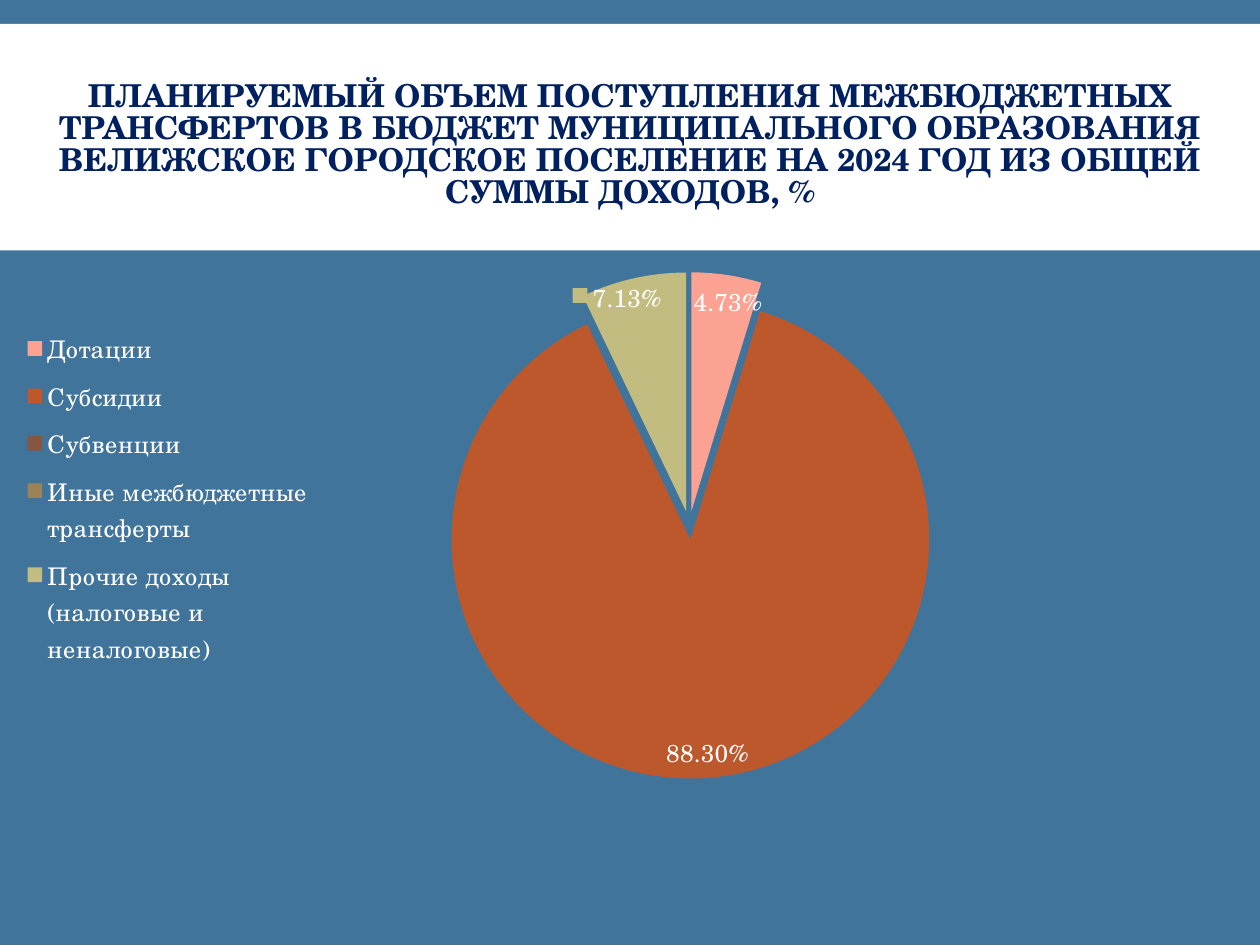
"""Build the slide with the planned share of interbudgetary transfers in 2024."""
import pptx
import pptx.chart.data
import pptx.dml.color
import pptx.enum.chart
import pptx.enum.shapes
import pptx.enum.text
import pptx.oxml
import pptx.oxml.ns
import pptx.util

Cm = pptx.util.Cm
Pt = pptx.util.Pt
FONT = "TeX Gyre Schola"
NUMBER_FORMAT = "0.00%;;"
COLORS = {"background": "40749B", "band": "FFFFFF", "title": "002060", "text": "FFFFFF"}
SLICES = {
    "Дотации": (0.0473, "FBA293"),
    "Субсидии": (0.883, "BD582C"),
    "Субвенции": (0, "865640"),
    "Иные межбюджетные трансферты": (0, "9B8357"),
    "Прочие доходы (налоговые и неналоговые)": (0.0713, "C2BC80"),
}
LABEL_SHIFTS = {0: (0.03, 0, 0), 3: (0.03, 0.1, 1), 4: (-0.05, -0.01, 1)}


def style_font(font, size, color):
    font.name = FONT
    font.size = Pt(size)
    font.color.rgb = pptx.dml.color.RGBColor.from_string(COLORS[color])


def make_layout(target=None, **values):
    namespace = pptx.oxml.ns.nsdecls("c")
    target_xml = f'<c:layoutTarget val="{target}"/>' if target else ""
    modes = "".join(f'<c:{axis}Mode val="edge"/>' for axis in "xy") if "w" in values else ""
    sizes = "".join(f'<c:{name} val="{value}"/>' for name, value in values.items())
    return pptx.oxml.parse_xml(
        f"<c:layout {namespace}><c:manualLayout>{target_xml}{modes}{sizes}</c:manualLayout></c:layout>"
    )


presentation = pptx.Presentation()
presentation.slide_width = Cm(25.4)
presentation.slide_height = Cm(19.05)
slide = presentation.slides.add_slide(presentation.slide_layouts[5])
slide.background.fill.solid()
slide.background.fill.fore_color.rgb = pptx.dml.color.RGBColor.from_string(COLORS["background"])

band = slide.shapes.add_shape(
    pptx.enum.shapes.MSO_SHAPE.RECTANGLE, Cm(0), Cm(0.48), Cm(25.4), Cm(4.57)
)
band.shadow.inherit = False
band.fill.solid()
band.fill.fore_color.rgb = pptx.dml.color.RGBColor.from_string(COLORS["band"])
band.line.fill.background()

title = slide.shapes.title
title._element.addprevious(band._element)
title.left, title.top, title.width, title.height = Cm(0), Cm(1.47), Cm(25.4), Cm(2.95)
title.text_frame.word_wrap = True
title.text_frame.auto_size = pptx.enum.text.MSO_AUTO_SIZE.NONE
title.text_frame.vertical_anchor = pptx.enum.text.MSO_ANCHOR.MIDDLE
paragraph = title.text_frame.paragraphs[0]
paragraph.alignment = pptx.enum.text.PP_ALIGN.CENTER
paragraph.line_spacing = 0.85
run = paragraph.add_run()
run.text = (
    "ПЛАНИРУЕМЫЙ ОБЪЕМ ПОСТУПЛЕНИЯ МЕЖБЮДЖЕТНЫХ ТРАНСФЕРТОВ В БЮДЖЕТ "
    "МУНИЦИПАЛЬНОГО ОБРАЗОВАНИЯ ВЕЛИЖСКОЕ ГОРОДСКОЕ ПОСЕЛЕНИЕ НА 2024 ГОД "
    "ИЗ ОБЩЕЙ СУММЫ ДОХОДОВ, %"
)
run.font.bold = True
style_font(run.font, 18, "title")

chart_data = pptx.chart.data.CategoryChartData(number_format="0.00%")
chart_data.categories = list(SLICES)
chart_data.add_series("Series 1", [value for value, color in SLICES.values()])
chart = slide.shapes.add_chart(
    pptx.enum.chart.XL_CHART_TYPE.PIE_EXPLODED, Cm(0), Cm(5.08), Cm(25.04), Cm(13.61), chart_data
).chart
chart.has_title = False
style_font(chart.font, 14, "text")
chart.has_legend = True
chart.legend.position = pptx.enum.chart.XL_LEGEND_POSITION.BOTTOM
chart.legend.include_in_layout = False
style_font(chart.legend.font, 13.9, "text")
for old_layout in chart.legend._element.findall(pptx.oxml.ns.qn("c:layout")):
    chart.legend._element.remove(old_layout)
chart.legend._element.find(pptx.oxml.ns.qn("c:legendPos")).addnext(
    make_layout(x=0.01, y=0.1, w=0.25, h=0.53)
)
plot_area = chart._chartSpace.chart.plotArea
for old_layout in plot_area.findall(pptx.oxml.ns.qn("c:layout")):
    plot_area.remove(old_layout)
plot_area.insert(0, make_layout("inner", x=0.35, y=0.03, w=0.41, h=0.75))

plot = chart.plots[0]
plot.vary_by_categories = True
series = plot.series[0]
series._element.find(pptx.oxml.ns.qn("c:explosion")).set("val", "6")
for index, (value, color) in enumerate(SLICES.values()):
    slice_format = series.points[index].format
    slice_format.fill.solid()
    slice_format.fill.fore_color.rgb = pptx.dml.color.RGBColor.from_string(color)
    slice_format.line.fill.background()

labels = series.data_labels
labels.show_value = True
labels.show_percentage = False
labels.number_format = NUMBER_FORMAT
labels.number_format_is_linked = False
labels.position = pptx.enum.chart.XL_LABEL_POSITION.INSIDE_END
style_font(labels.font, 14, "text")
for index, (shift_x, shift_y, show_key) in LABEL_SHIFTS.items():
    label = series.points[index].data_label
    style_font(label.font, 14, "text")
    label.position = pptx.enum.chart.XL_LABEL_POSITION.INSIDE_END
    element = label._dLbl
    element.find(pptx.oxml.ns.qn("c:showLegendKey")).set("val", str(show_key))
    layout = make_layout(x=shift_x, y=shift_y)
    element.find(pptx.oxml.ns.qn("c:idx")).addnext(layout)
    layout.addnext(pptx.oxml.parse_xml(
        f'<c:numFmt {pptx.oxml.ns.nsdecls("c")} formatCode="{NUMBER_FORMAT}" sourceLinked="0"/>'
    ))

presentation.save("out.pptx")
